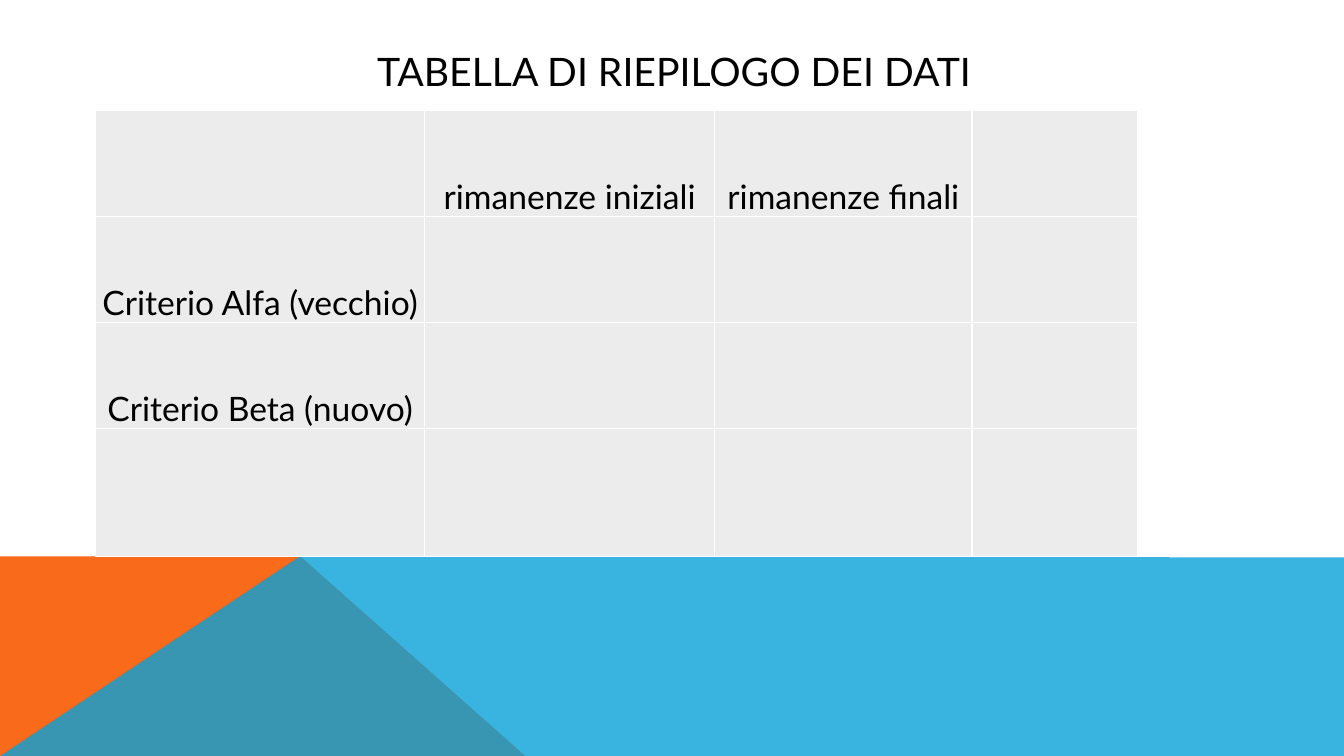
from lxml import etree
from pptx import Presentation
from pptx.dml.color import RGBColor
from pptx.enum import text
from pptx.oxml import ns
from pptx.util import Inches, Pt

# Content
TITLE = "TABELLA DI RIEPILOGO DEI DATI"
ROWS = [
    ("", "rimanenze iniziali", "rimanenze finali", ""),
    ("Criterio Alfa (vecchio)", "", "", ""),
    ("Criterio Beta (nuovo)", "", "", ""),
    ("", "", "", ""),
]
COLUMN_WIDTHS = (3.26, 2.88, 2.55, 1.64)
ROW_HEIGHTS = (1.05, 1.05, 1.05, 1.27)
TABLE_LEFT, TABLE_TOP = 0.95, 1.1
FONT, INK, CELL_FILL, BORDER = "Lato", "000000", "ECECEC", "FFFFFF"
# Corner points, colour, opacity in percent
BANDS = [
    ([(0, 7.5), (0, 5.52), (2.98, 5.52), (5.21, 7.5)], "F96A1B", 100),
    ([(0, 7.5), (2.97, 5.52), (13.33, 5.53), (13.33, 7.5)], "08A1D9", 80),
]


def paint(fill, colour):
    fill.solid()
    fill.fore_color.rgb = RGBColor.from_string(colour)


def write(frame, words, size):
    para = frame.paragraphs[0]
    para.alignment = text.PP_ALIGN.CENTER
    span = para.add_run()
    span.text = words
    span.font.size = Pt(size)
    span.font.name = FONT
    paint(span.font.fill, INK)


def add_band(page, points, colour, opacity):
    builder = page.shapes.build_freeform(
        *map(Inches, points[0]), scale=1.0)
    builder.add_line_segments(
        [(Inches(x), Inches(y)) for x, y in points[1:]], close=True)
    band = builder.convert_to_shape()
    band.shadow.inherit = False
    band.line.fill.background()
    paint(band.fill, colour)
    if opacity < 100:
        tint = band.fill._xPr.find(".//" + ns.qn("a:srgbClr"))
        etree.SubElement(tint, ns.qn("a:alpha"), val=str(opacity * 1000))


def add_borders(cell):
    properties = cell._tc.get_or_add_tcPr()
    for position, side in enumerate(("lnL", "lnR", "lnT", "lnB")):
        line = etree.Element(ns.qn("a:" + side), w=str(Pt(1)))
        solid = etree.SubElement(line, ns.qn("a:solidFill"))
        etree.SubElement(solid, ns.qn("a:srgbClr"), val=BORDER)
        properties.insert(position, line)


deck = Presentation()
deck.slide_width, deck.slide_height = Inches(13.33), Inches(7.5)
page = deck.slides.add_slide(deck.slide_layouts[6])
paint(page.background.fill, "FFFFFF")

# Coloured bands along the bottom
for points, colour, opacity in BANDS:
    add_band(page, points, colour, opacity)

# Title
box = page.shapes.add_textbox(
    Inches(1.2), Inches(0.4), Inches(10.97), Inches(0.6))
box.text_frame.word_wrap = True
box.text_frame.vertical_anchor = text.MSO_ANCHOR.MIDDLE
write(box.text_frame, TITLE, 28)

# Summary table
table = page.shapes.add_table(
    len(ROWS), len(COLUMN_WIDTHS), Inches(TABLE_LEFT), Inches(TABLE_TOP),
    Inches(sum(COLUMN_WIDTHS)), Inches(sum(ROW_HEIGHTS))).table
table.first_row = table.horz_banding = False
for column, width in zip(table.columns, COLUMN_WIDTHS):
    column.width = Inches(width)
for row, height, labels in zip(table.rows, ROW_HEIGHTS, ROWS):
    row.height = Inches(height)
    for cell, label in zip(row.cells, labels):
        paint(cell.fill, CELL_FILL)
        add_borders(cell)
        cell.vertical_anchor = text.MSO_ANCHOR.BOTTOM
        cell.margin_left = cell.margin_right = cell.margin_top = Inches(0.01)
        cell.margin_bottom = 0
        if label:
            write(cell.text_frame, label, 24)

deck.save("out.pptx")
